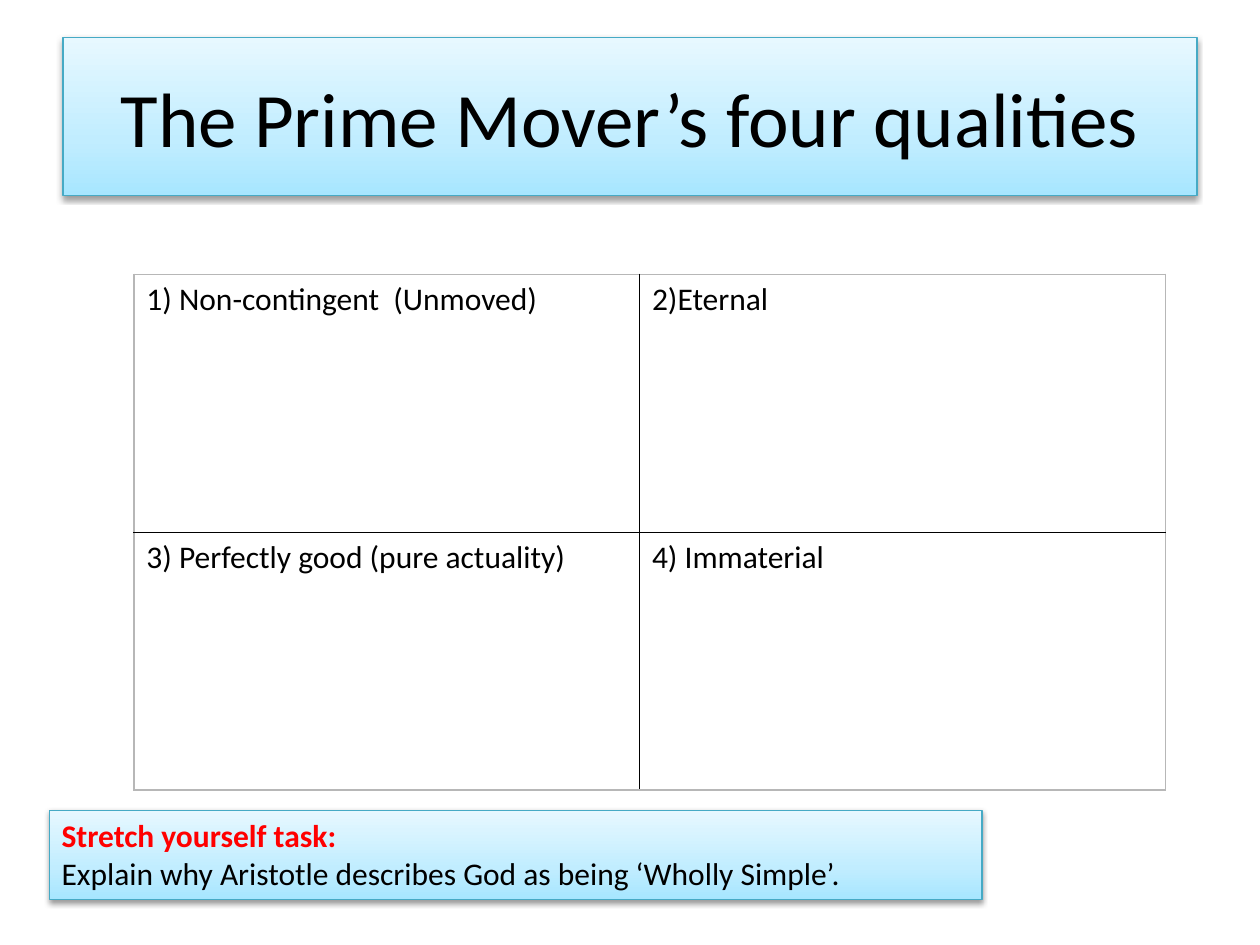
from dataclasses import dataclass

from pptx import Presentation
from pptx.dml.color import RGBColor as RGB
from pptx.enum.shapes import MSO_SHAPE as SHAPE
from pptx.enum.text import MSO_ANCHOR as ANCHOR, PP_ALIGN as ALIGN
from pptx.oxml import parse_xml
from pptx.oxml.ns import nsdecls
from pptx.util import Pt


@dataclass(frozen=True)
class Theme:
    font: str = "Calibri"
    title_size: int = 44
    body_size: int = 18
    text: str = "000000"
    accent: str = "FF0000"
    panel_line: str = "46AAC5"
    panel_stops: tuple = ((0, "A7E6FF"), (35, "C1EDFF"), (100, "E7F8FF"))
    shadow: str = "000000"
    inner_border: str = "000000"
    outer_border: str = "B7B7B7"


THEME = Theme()


def style_paragraph(p, size, color=THEME.text, bold=False):
    p.font.name = THEME.font
    p.font.size = Pt(size)
    p.font.bold = bold
    p.font.color.rgb = RGB.from_string(color)


def add_panel(slide, box):
    """Add a rectangle with the blue gradient, thin line and soft shadow."""
    s = slide.shapes.add_shape(SHAPE.RECTANGLE, *map(Pt, box))
    s.line.color.rgb = RGB.from_string(THEME.panel_line)
    s.line.width = Pt(0.75)
    s.shadow.inherit = False
    stops = "".join(
        f'<a:gs pos="{pos * 1000}"><a:srgbClr val="{color}"/></a:gs>'
        for pos, color in THEME.panel_stops)
    spPr = s._element.spPr
    spPr.prstGeom.addnext(parse_xml(
        f'<a:gradFill {nsdecls("a")} rotWithShape="1"><a:gsLst>{stops}</a:gsLst>'
        '<a:lin ang="16200000" scaled="0"/></a:gradFill>'))
    spPr.effectLst.append(parse_xml(
        f'<a:outerShdw {nsdecls("a")} blurRad="{Pt(3.1)}" dist="{Pt(1.6)}" '
        f'dir="5400000" rotWithShape="0"><a:srgbClr val="{THEME.shadow}">'
        '<a:alpha val="38000"/></a:srgbClr></a:outerShdw>'))
    s.text_frame.word_wrap = True
    return s


def add_title(slide, box, text):
    tf = add_panel(slide, box).text_frame
    tf.vertical_anchor = ANCHOR.MIDDLE
    p = tf.paragraphs[0]
    p.text = text
    p.alignment = ALIGN.CENTER
    style_paragraph(p, THEME.title_size)


def set_borders(cell, colors):
    """Draw 1 pt cell borders from a dict of side (L, R, T, B) to colour."""
    tcPr = cell._tc.get_or_add_tcPr()
    for i, (side, color) in enumerate(colors.items()):
        tcPr.insert(i, parse_xml(
            f'<a:ln{side} {nsdecls("a")} w="{Pt(1)}"><a:solidFill>'
            f'<a:srgbClr val="{color}"/></a:solidFill></a:ln{side}>'))


def add_qualities(slide, box, rows, first_share):
    """Add the two-column grid; first_share is the first column's part of the width."""
    left, top, width, height = box
    n_rows, n_cols = len(rows), len(rows[0])
    table = slide.shapes.add_table(n_rows, n_cols, *map(Pt, box)).table
    table.first_row = table.horz_banding = False
    for column, share in zip(table.columns, (first_share, 1 - first_share)):
        column.width = Pt(width * share)
    for r, texts in enumerate(rows):
        table.rows[r].height = Pt(height / n_rows)
        for c, text in enumerate(texts):
            cell = table.cell(r, c)
            cell.text = text
            cell.fill.background()
            style_paragraph(cell.text_frame.paragraphs[0], THEME.body_size)
            on_edge = {"L": c == 0, "R": c == n_cols - 1,
                       "T": r == 0, "B": r == n_rows - 1}
            set_borders(cell, {
                side: THEME.outer_border if edge else THEME.inner_border
                for side, edge in on_edge.items()})


def add_task(slide, box, heading, task):
    tf = add_panel(slide, box).text_frame
    tf.vertical_anchor = ANCHOR.TOP
    tf.text = f"{heading}\n{task}"
    for p in tf.paragraphs:
        p.alignment = ALIGN.LEFT
    style_paragraph(tf.paragraphs[0], THEME.body_size, THEME.accent, bold=True)
    style_paragraph(tf.paragraphs[1], THEME.body_size)


def main():
    prs = Presentation()
    prs.slide_width, prs.slide_height = Pt(720), Pt(540)
    slide = prs.slides.add_slide(prs.slide_layouts[6])
    add_title(slide, (36, 21.6, 648, 90), "The Prime Mover’s four qualities")
    add_qualities(slide, (76.5, 156.8, 589.6, 294.8), [
        ["1) Non-contingent  (Unmoved)", "2)Eternal"],
        ["3) Perfectly good (pure actuality)", "4) Immaterial"],
    ], first_share=0.49)
    add_task(slide, (28.1, 463, 533, 50.9), "Stretch yourself task:",
             "Explain why Aristotle describes God as being ‘Wholly Simple’.")
    prs.save("out.pptx")


if __name__ == "__main__":
    main()
